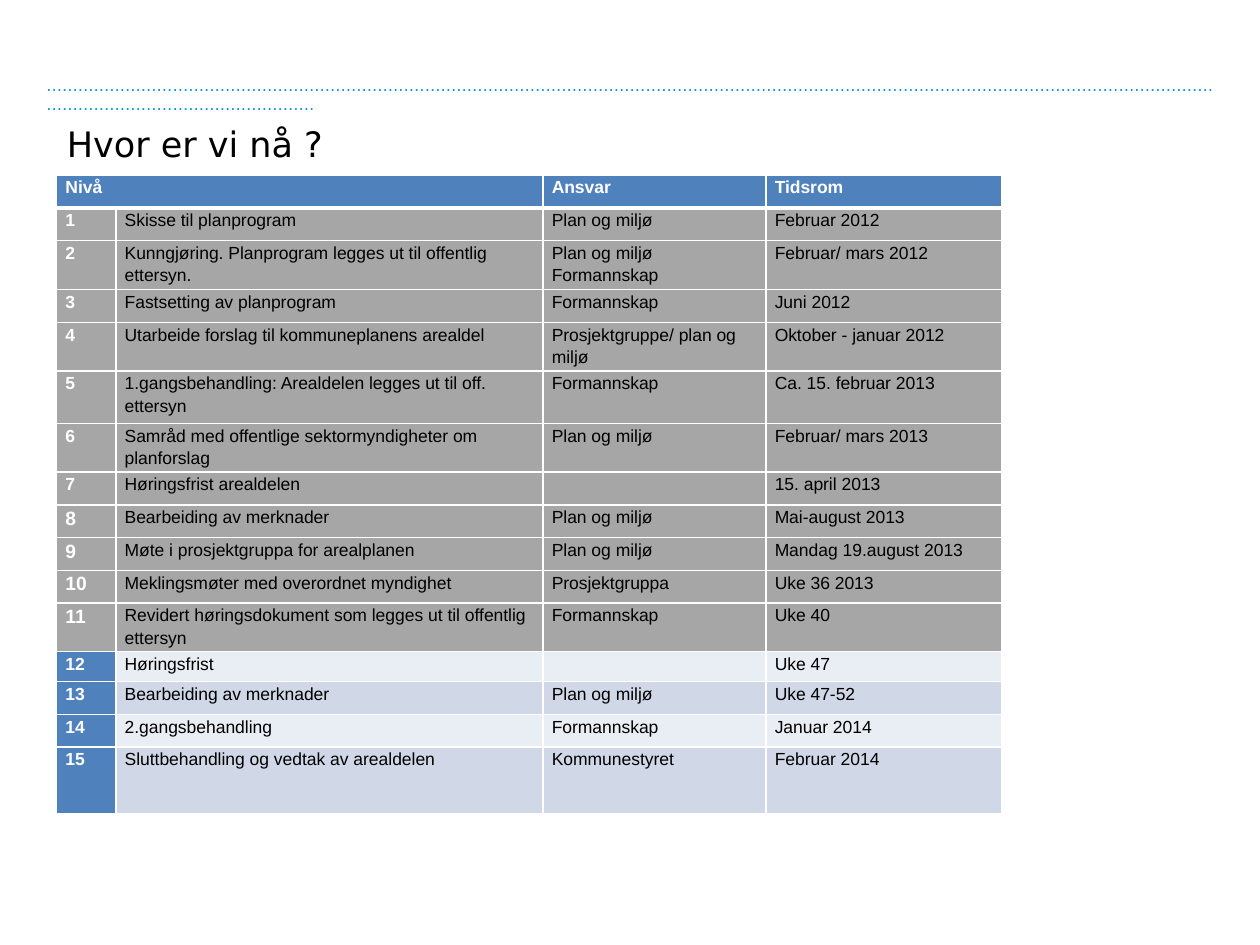
from copy import deepcopy

from lxml import etree
from pptx import Presentation
from pptx.dml.color import RGBColor
from pptx.enum.text import MSO_ANCHOR, MSO_AUTO_SIZE, PP_ALIGN
from pptx.oxml.ns import qn
from pptx.util import Inches, Pt

MIDDLE = MSO_ANCHOR.MIDDLE
LEFT = PP_ALIGN.LEFT
NO_AUTOFIT = MSO_AUTO_SIZE.NONE
TITLE_ONLY = 5

COLORS = {
    "white": "FFFFFF",
    "black": "000000",
    "dots": "0098DB",
    "blue": "4F81BD",
    "done": "A6A6A6",
    "light": "E9EDF4",
    "dark": "D0D8E8",
}

TITLE = "Hvor er vi nå ?"
DOTS = "…" * 91
HEADINGS = ("Nivå", "", "Ansvar", "Tidsrom")
STEPS = [
    ("Skisse til planprogram", "Plan og miljø", "Februar 2012"),
    ("Kunngjøring. Planprogram legges ut til offentlig ettersyn.",
     "Plan og miljø\nFormannskap", "Februar/ mars 2012"),
    ("Fastsetting av planprogram", "Formannskap", "Juni 2012"),
    ("Utarbeide forslag til kommuneplanens arealdel",
     "Prosjektgruppe/ plan og miljø", "Oktober - januar 2012"),
    ("1.gangsbehandling: Arealdelen legges ut til off. ettersyn",
     "Formannskap", "Ca. 15. februar 2013"),
    ("Samråd med offentlige sektormyndigheter om planforslag",
     "Plan og miljø", "Februar/ mars 2013"),
    ("Høringsfrist arealdelen", "", "15. april 2013"),
    ("Bearbeiding av merknader", "Plan og miljø", "Mai-august 2013"),
    ("Møte i prosjektgruppa for arealplanen", "Plan og miljø", "Mandag 19.august 2013"),
    ("Meklingsmøter med overordnet myndighet", "Prosjektgruppa", "Uke 36 2013"),
    ("Revidert høringsdokument som legges ut til offentlig ettersyn",
     "Formannskap", "Uke 40"),
    ("Høringsfrist", "", "Uke 47"),
    ("Bearbeiding av merknader", "Plan og miljø", "Uke 47-52"),
    ("2.gangsbehandling", "Formannskap", "Januar 2014"),
    ("Sluttbehandling og vedtak av arealdelen", "Kommunestyret", "Februar 2014"),
]
DONE_STEPS = 11
LARGE_NUMBERS = range(8, 12)
COLUMN_WIDTHS = (0.47, 3.39, 1.77, 1.87)
ROW_HEIGHTS = (0.26, 0.26, 0.39, 0.26, 0.38, 0.42, 0.38, 0.26,
               0.26, 0.26, 0.26, 0.38, 0.24, 0.26, 0.26, 0.53)

CELL_FORMAT = {
    "margin_left": Inches(0.07),
    "margin_right": Inches(0.07),
    "margin_top": 0,
    "margin_bottom": 0,
}
PARAGRAPH_FORMAT = {"line_spacing": 1.15, "space_after": Pt(10)}


def apply(target, values):
    for name, value in values.items():
        setattr(target, name, value)


def style_font(font, size, color, name, bold=False):
    apply(font, {"size": Pt(size), "name": name, "bold": bold})
    font.color.rgb = RGBColor.from_string(COLORS[color])


def place(shape, left, top, width, height):
    apply(shape, {"left": Inches(left), "top": Inches(top),
                  "width": Inches(width), "height": Inches(height)})


def add_borders(cell, bottom):
    properties = cell._tc.get_or_add_tcPr()
    for side, width in (("L", 1), ("R", 1), ("T", 1), ("B", bottom)):
        line = etree.SubElement(properties, qn(f"a:ln{side}"), w=str(Pt(width)))
        fill = etree.SubElement(line, qn("a:solidFill"))
        etree.SubElement(fill, qn("a:srgbClr"), val=COLORS["white"])


def fill_cell(cell, text, fill, size, color, bold, bottom):
    apply(cell, CELL_FORMAT)
    add_borders(cell, bottom)
    cell.fill.solid()
    cell.fill.fore_color.rgb = RGBColor.from_string(COLORS[fill])
    paragraph = cell.text_frame.paragraphs[0]
    paragraph.text = text
    apply(paragraph, PARAGRAPH_FORMAT)
    for run in paragraph.runs:
        style_font(run.font, size, color, "Arial", bold)
    for line_break in paragraph._p.findall(qn("a:br")):
        line_break.insert(0, deepcopy(paragraph.runs[0]._r.rPr))
    if not text:
        etree.SubElement(paragraph._p, qn("a:endParaRPr"), sz=str(size * 100))


def row_fill(step):
    if step == 0:
        return "blue"
    if step <= DONE_STEPS:
        return "done"
    return "dark" if step % 2 else "light"


def add_plan(slide):
    rows = [HEADINGS] + [(str(n), *step) for n, step in enumerate(STEPS, 1)]
    plan = slide.shapes.add_table(
        len(rows), len(HEADINGS), Inches(0.45), Inches(1.39),
        Inches(sum(COLUMN_WIDTHS)), Inches(sum(ROW_HEIGHTS))).table
    for column, width in zip(plan.columns, COLUMN_WIDTHS):
        column.width = Inches(width)
    for row, height in zip(plan.rows, ROW_HEIGHTS):
        row.height = Inches(height)
    for step, texts in enumerate(rows):
        for column, text in enumerate(texts):
            heading = step == 0 or column == 0
            fill = "blue" if column == 0 and step > DONE_STEPS else row_fill(step)
            size = 11 if column == 0 and step in LARGE_NUMBERS else 10
            fill_cell(plan.cell(step, column), text, fill, size,
                      "white" if heading else "black", heading, 1 if step else 3)
    plan.cell(0, 0).merge(plan.cell(0, 1))


def main():
    deck = Presentation()
    apply(deck, {"slide_width": Inches(10), "slide_height": Inches(7.5)})
    slide = deck.slides.add_slide(deck.slide_layouts[TITLE_ONLY])

    dotted_rule = slide.shapes.add_textbox(0, 0, 0, 0)
    place(dotted_rule, 0.27, 0.55, 9.53, 0.25)
    dotted_rule.text_frame.word_wrap = True
    dotted_rule.text_frame.text = DOTS
    style_font(dotted_rule.text_frame.paragraphs[0].runs[0].font, 9, "dots", "DejaVu Sans")

    add_plan(slide)

    title = slide.shapes.title
    place(title, 0.43, 0.92, 9.06, 0.44)
    title.text_frame.text = TITLE
    apply(title.text_frame, {"auto_size": NO_AUTOFIT, "vertical_anchor": MIDDLE,
                             "word_wrap": True})
    heading = title.text_frame.paragraphs[0]
    heading.alignment = LEFT
    style_font(heading.runs[0].font, 20, "black", "DejaVu Sans")

    deck.save("out.pptx")


if __name__ == "__main__":
    main()
